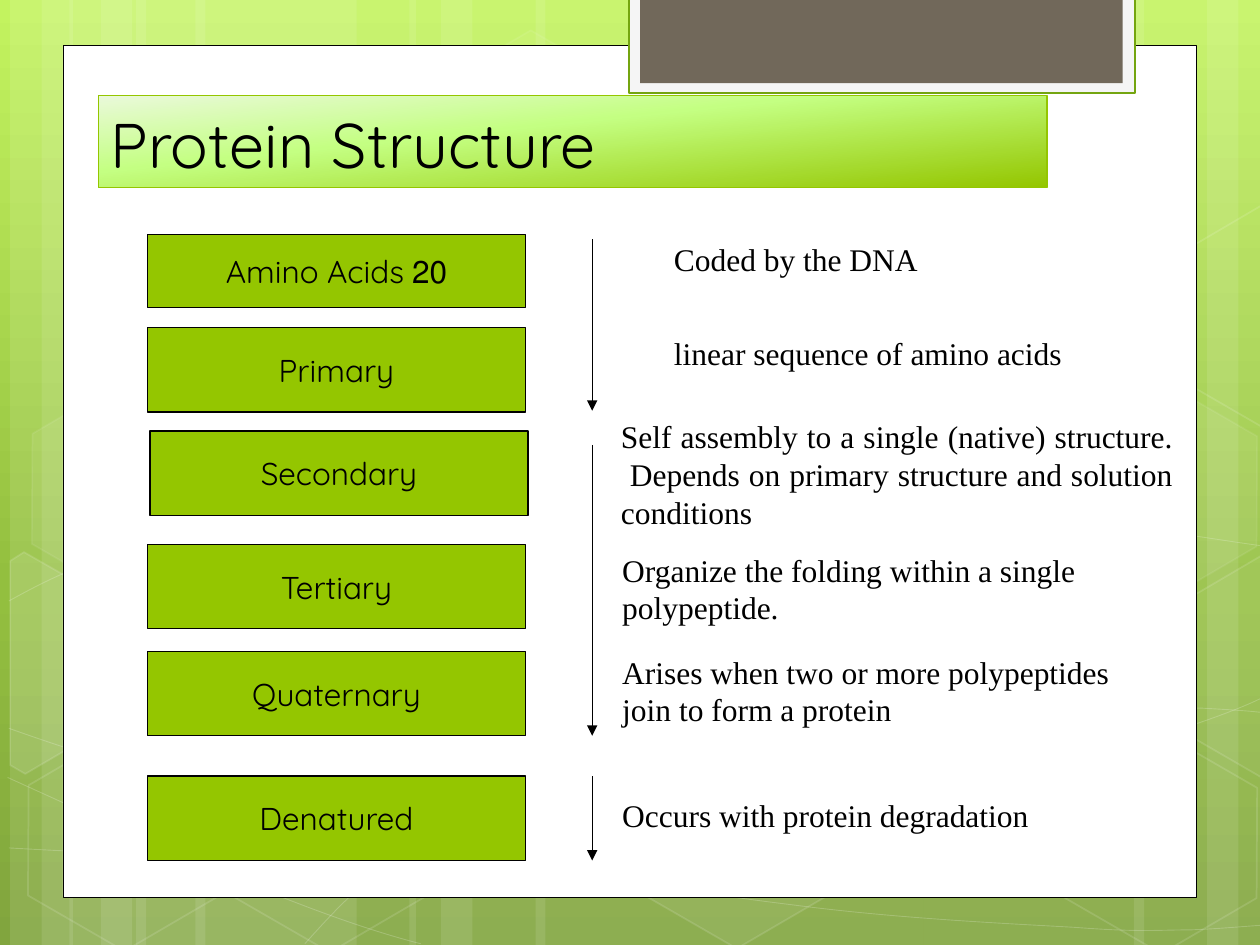
import math
from typing import NamedTuple, Optional

import pptx
import pptx.dml.color
import pptx.enum.shapes
import pptx.enum.text
import pptx.oxml.ns
import pptx.util
from lxml import etree

Inches, Pt = pptx.util.Inches, pptx.util.Pt
RGBColor = pptx.dml.color.RGBColor
Shape = pptx.enum.shapes.MSO_SHAPE
Align = pptx.enum.text.PP_ALIGN
Anchor = pptx.enum.text.MSO_ANCHOR
qn = pptx.oxml.ns.qn

WHITE = RGBColor(0xFF, 0xFF, 0xFF)
BLACK = RGBColor(0, 0, 0)
GREEN = RGBColor(0x94, 0xC6, 0x00)
TAB_EDGE = RGBColor(0x74, 0xA5, 0x10)
TAB_FRAME = RGBColor(0xF5, 0xF5, 0xF5)
TAB_BROWN = RGBColor(0x71, 0x68, 0x5A)
BACKDROP_STOPS = [(0, RGBColor(0xC3, 0xF3, 0x5F)), (62, RGBColor(0x93, 0xBF, 0x3F)),
                  (100, RGBColor(0x81, 0xA5, 0x3E))]
TITLE_STOPS = [(0, RGBColor(0xEA, 0xF9, 0xDA)), (40, RGBColor(0xC4, 0xFF, 0x82)), (100, GREEN)]
HEADING_FONT, BODY_FONT = "Quicksand", "Times New Roman"
TILT = 30


class Paint(NamedTuple):
    fill: Optional[RGBColor] = None
    fill_alpha: int = 100
    line: Optional[RGBColor] = None
    width: float = 0.75
    line_alpha: int = 100


class Hexagon(NamedTuple):
    left: float
    top: float
    fill_alpha: int
    line_alpha: int


class CutHexagon(NamedTuple):
    center: tuple
    points: list
    fill_alpha: int


class Level(NamedTuple):
    name: str
    left: float
    top: float
    height: float


class Note(NamedTuple):
    text: str
    left: float
    top: float
    width: float
    height: float
    align: Align = Align.LEFT


def set_alpha(owner, percent: int) -> None:
    """Make the solid colour of owner partly transparent."""
    if percent < 100:
        color = owner.find(qn("a:solidFill"))[0]
        etree.SubElement(color, qn("a:alpha")).set("val", str(percent * 1000))


def paint_shape(shape, paint: Paint) -> None:
    shape.shadow.inherit = False
    if paint.fill is None:
        shape.fill.background()
    else:
        shape.fill.solid()
        shape.fill.fore_color.rgb = paint.fill
        set_alpha(shape.element.spPr, paint.fill_alpha)
    if paint.line is None:
        shape.line.fill.background()
    else:
        shape.line.color.rgb = paint.line
        shape.line.width = Pt(paint.width)
        set_alpha(shape.element.spPr.find(qn("a:ln")), paint.line_alpha)


def glass(fill_alpha: int, line_alpha: int) -> Paint:
    return Paint(WHITE if fill_alpha else None, fill_alpha, WHITE, 1, line_alpha)


def set_gradient(fill, owner, stops: list, angle: int) -> None:
    fill.gradient()
    gradient = next(owner.iter(qn("a:gradFill")))
    stop_list = gradient.find(qn("a:gsLst"))
    for stop in list(stop_list):
        stop_list.remove(stop)
    for position, color in stops:
        stop = etree.SubElement(stop_list, qn("a:gs"), pos=str(position * 1000))
        etree.SubElement(stop, qn("a:srgbClr"), val=str(color))
    direction = gradient.find(qn("a:lin"))
    direction.set("ang", str(angle * 60000))
    direction.set("scaled", "0")


def add_box(page, left: float, top: float, width: float, height: float, paint: Paint,
            kind: Shape = Shape.RECTANGLE):
    box = page.shapes.add_shape(kind, Inches(left), Inches(top), Inches(width), Inches(height))
    paint_shape(box, paint)
    return box


def add_outline(page, points: list, paint: Paint, close: bool):
    start, *others = [(Inches(x), Inches(y)) for x, y in points]
    builder = page.shapes.build_freeform(*start)
    builder.add_line_segments(others, close=close)
    outline = builder.convert_to_shape()
    paint_shape(outline, paint)
    return outline


def add_curve(page, knots: list) -> None:
    """Draw a chain of cubic curves: a start, then three points per curve."""
    curve = add_outline(page, knots, Paint(line=WHITE, width=0.5, line_alpha=20), False)
    track = next(curve.element.iter(qn("a:path")))
    segments = track.findall(qn("a:lnTo"))
    for first in range(0, len(segments), 3):
        bend = etree.SubElement(track, qn("a:cubicBezTo"))
        for segment in segments[first:first + 3]:
            bend.append(segment[0])
            track.remove(segment)


def add_cut_hexagon(page, item: CutHexagon) -> None:
    """Draw the outline upright, then tilt it about its center."""
    cos, sin = math.cos(math.radians(TILT)), math.sin(math.radians(TILT))
    center_x, center_y = item.center
    upright = []
    for x, y in item.points:
        dx, dy = x - center_x, y - center_y
        upright.append((center_x + dx * cos + dy * sin, center_y - dx * sin + dy * cos))
    add_outline(page, upright, glass(item.fill_alpha, 12), True).rotation = TILT


def write(box, text: str, font: str, size: float, align: Align, anchor: Anchor, wrap: bool = True):
    frame = box.text_frame
    frame.word_wrap = wrap
    frame.vertical_anchor = anchor
    para = frame.paragraphs[0]
    para.alignment = align
    span = para.add_run()
    span.text = text
    span.font.name, span.font.size, span.font.color.rgb = font, Pt(size), BLACK


def add_arrow(page, x: float, top: float, bottom: float) -> None:
    arrow = page.shapes.add_connector(pptx.enum.shapes.MSO_CONNECTOR.STRAIGHT,
                                      Inches(x), Inches(top), Inches(x), Inches(bottom))
    arrow.line.color.rgb = BLACK
    arrow.line.width = Pt(0.75)
    properties = arrow.element.spPr
    etree.SubElement(properties.find(qn("a:ln")), qn("a:tailEnd"), type="triangle")
    etree.SubElement(properties, qn("a:effectLst"))


STRIPS = [(1.08, 1.75), (0.08, 0.5), (0.33, 0.83), (1.55, 1.75), (0.55, 0.5), (0.8, 0.83),
          (7.33, 1.75), (9.58, 0.5), (9, 0.83), (4.25, 3.08), (3.25, 0.5), (3.5, 0.83)]
CURVES = [
    [(0.07, 6.73), (0.61, 6.76), (1.15, 6.79), (1.9, 6.78), (2.65, 6.77), (3.58, 6.75), (4.58, 6.65),
     (5.58, 6.55), (7, 6.36), (7.92, 6.17), (8.83, 5.98), (9.77, 5.68), (10.07, 5.51)],
    [(0.07, 4.77), (0.36, 4.61), (0.65, 4.46), (1.21, 4.31), (1.78, 4.16), (2.59, 3.94), (3.47, 3.87),
     (4.36, 3.8), (5.44, 3.79), (6.54, 3.87), (7.64, 3.95), (9.47, 4.26), (10.07, 4.34)],
    [(0.06, 6.17), (1.27, 6.72), (2.47, 7.27), (3.34, 7.49)],
    [(0.07, 5.78), (0.38, 5.89), (0.7, 6), (1.28, 6.16), (1.86, 6.31), (2.73, 6.56), (3.57, 6.73),
     (4.4, 6.9), (5.45, 7.08), (6.28, 7.18), (7.11, 7.29), (8, 7.33), (8.53, 7.36),
     (9.05, 7.4), (9.19, 7.38), (9.45, 7.38), (9.71, 7.37), (9.89, 7.35), (10.07, 7.34)],
    [(2.42, 7.49), (2.6, 7.29), (2.78, 7.09), (3.02, 6.91), (3.26, 6.73), (3.6, 6.53), (3.88, 6.39),
     (4.16, 6.25), (4.33, 6.19), (4.7, 6.09), (5.06, 5.99), (5.73, 5.85), (6.08, 5.78),
     (6.44, 5.71), (6.49, 5.71), (6.8, 5.69), (7.11, 5.66), (7.6, 5.63), (7.94, 5.62),
     (8.29, 5.61), (8.86, 5.62), (8.86, 5.62), (9.08, 5.62), (9.31, 5.62), (9.53, 5.62),
     (9.71, 5.63), (9.88, 5.64), (9.97, 5.65), (10.06, 5.66), (10.03, 5.65), (10.06, 5.66)],
]
HEXAGONS = [Hexagon(3.34, 0.36, 4, 8), Hexagon(4.97, 5.89, 6, 12), Hexagon(0.11, 5.91, 0, 12),
            Hexagon(0.14, 3.12, 7, 8), Hexagon(1.74, 5.92, 0, 12), Hexagon(8.34, 5.93, 0, 12),
            Hexagon(8.34, 3.14, 7, 8)]
CUT_HEXAGONS = [
    CutHexagon((0.36, 5.35), [(0.08, 4.45), (0.19, 4.38), (0.96, 4.82), (0.95, 5.7),
                              (0.2, 6.14), (0.08, 6.07)], 10),
    CutHexagon((9.85, 5.2), [(9.26, 4.85), (10.01, 4.41), (10.09, 4.46), (10.09, 6.13),
                             (10.02, 6.17), (9.26, 5.73)], 4),
    CutHexagon((9.85, 2.41), [(9.26, 2.07), (10.01, 1.63), (10.1, 1.68), (10.09, 3.35),
                              (10.02, 3.39), (9.26, 2.95)], 0),
]
LEVELS = [Level("20 Amino Acids", 1.17, 1.86, 0.58), Level("Primary", 1.17, 2.6, 0.67),
          Level("Secondary", 1.19, 3.42, 0.67), Level("Tertiary", 1.17, 4.32, 0.67),
          Level("Quaternary", 1.17, 5.17, 0.67), Level("Denatured", 1.17, 6.16, 0.67)]
ARROWS = [(1.9, 3.26), (3.53, 5.84), (6.16, 6.83)]
NOTES = [
    Note("Coded by the DNA", 5.25, 1.86, 2.16, 0.4),
    Note("linear sequence of amino acids", 5.25, 2.6, 3.39, 0.4),
    Note("Self assembly to a single (native) structure.  Depends on primary structure "
         "and solution conditions", 4.83, 3.26, 4.58, 1.01, Align.JUSTIFY),
    Note("Organize the folding within a single polypeptide.", 4.84, 4.32, 4.33, 0.71),
    Note("Arises when two or more polypeptides join to form a protein", 4.84, 5.13, 4.33, 0.71),
    Note("Occurs with protein degradation", 4.84, 6.27, 3.84, 0.4),
]


def main() -> None:
    deck = pptx.Presentation()
    deck.slide_width, deck.slide_height = Inches(10), Inches(7.5)
    page = deck.slides.add_slide(deck.slide_layouts[6])

    # Backdrop: gradient, light strips, curves and hexagons
    set_gradient(page.background.fill, page.element, BACKDROP_STOPS, 90)
    for left, width in STRIPS:
        add_box(page, left, 0, width, 7.5, Paint(WHITE, 10))
    for knots in CURVES:
        add_curve(page, knots)
    for item in HEXAGONS:
        hexagon = add_box(page, item.left, item.top, 1.75, 1.52,
                          glass(item.fill_alpha, item.line_alpha), Shape.HEXAGON)
        hexagon.adjustments[0] = 0.285
        hexagon.rotation = TILT
    for item in CUT_HEXAGONS:
        add_cut_hexagon(page, item)

    # White panel and the tab at its top
    add_box(page, 0.5, 0.36, 9, 6.76, Paint(WHITE, line=BLACK, width=0.5))
    add_box(page, 4.99, -0.02, 4.02, 0.76, Paint(TAB_FRAME, line=TAB_EDGE, width=1.25))
    add_box(page, 5.08, -0.02, 3.83, 0.68, Paint(TAB_BROWN))

    # Title
    title = add_box(page, 0.78, 0.76, 7.53, 0.73, Paint(line=GREEN))
    set_gradient(title.fill, title.element, TITLE_STOPS, 84)
    write(title, "Protein Structure", HEADING_FONT, 36, Align.LEFT, Anchor.BOTTOM)

    # Structure levels, set right to left
    for level in LEVELS:
        box = add_box(page, level.left, level.top, 3, level.height, Paint(GREEN, line=BLACK))
        write(box, level.name, HEADING_FONT, 18, Align.CENTER, Anchor.MIDDLE, wrap=False)
        next(box.element.iter(qn("a:pPr"))).set("rtl", "1")

    # Arrows and explanations
    for top, bottom in ARROWS:
        add_arrow(page, 4.7, top, bottom)
    for note in NOTES:
        box = page.shapes.add_textbox(*map(Inches, note[1:5]))
        write(box, note.text, BODY_FONT, 18, note.align, Anchor.TOP)

    deck.save("out.pptx")


if __name__ == "__main__":
    main()
